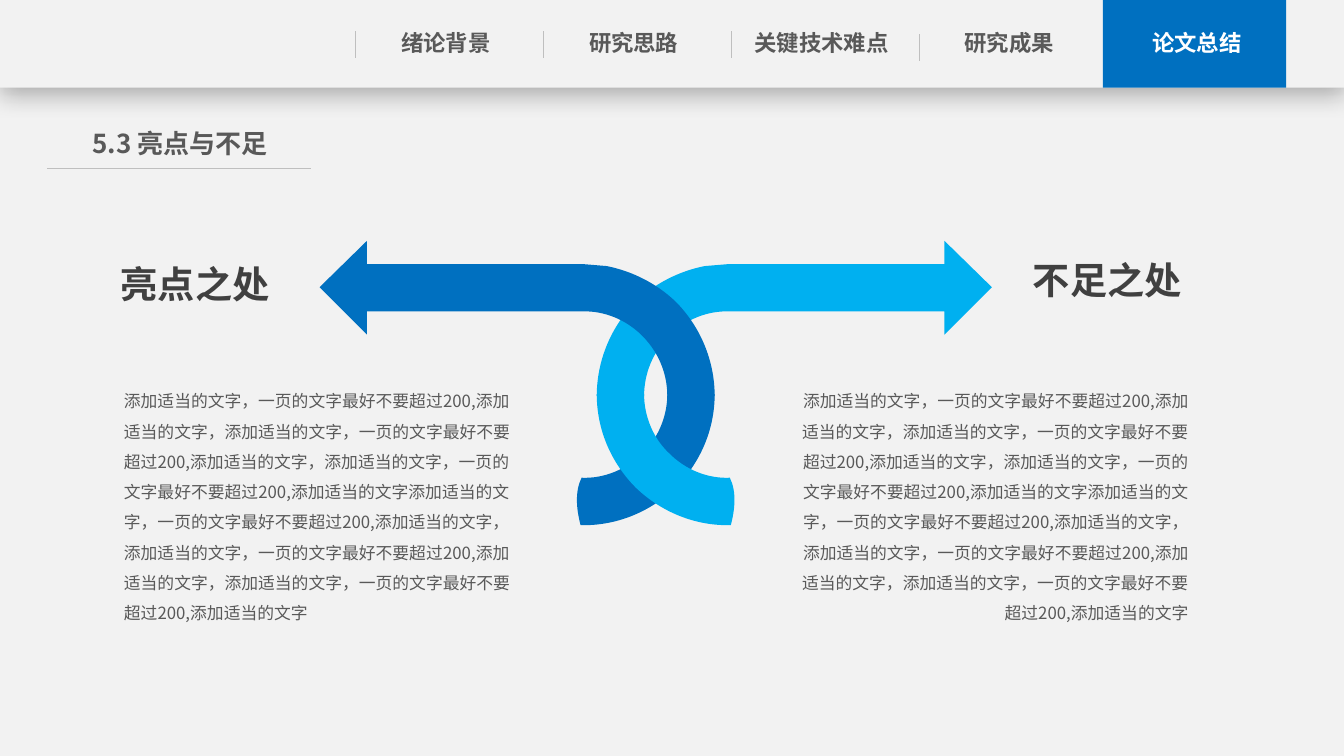
from lxml import etree
from pptx import Presentation
from pptx import util as u
from pptx.dml.color import RGBColor
from pptx.enum import shapes, text
from pptx.oxml import parse_xml
from pptx.oxml.ns import qn

FONT = "Noto Sans CJK SC"
DARK_BLUE, LIGHT_BLUE = "0070C0", "00B0F0"
PAPER, GREY, RULE_GREY = "F2F2F2", "595959", "BFBFBF"
NS = 'xmlns:a="http://schemas.openxmlformats.org/drawingml/2006/main"'
PAGE_WIDTH, PAGE_HEIGHT = 40 / 3, 7.5
TABS = ["绪论背景", "研究思路", "关键技术难点", "研究成果", "论文总结"]
FIRST_TAB, LAST_TAB = 3.69, 11.14
TAB_STEP = (LAST_TAB - FIRST_TAB) / (len(TABS) - 1)
BODY = (
    "添加适当的文字，一页的文字最好不要超过200,添加适当的文字，"
    "添加适当的文字，一页的文字最好不要超过200,添加适当的文字，"
    "添加适当的文字，一页的文字最好不要超过200,添加适当的文字"
    "添加适当的文字，一页的文字最好不要超过200,添加适当的文字，"
    "添加适当的文字，一页的文字最好不要超过200,添加适当的文字，"
    "添加适当的文字，一页的文字最好不要超过200,添加适当的文字"
)
MIRROR_SUM = 13.01  # left and mirrored x add up to this

# Outlines of the right-hand arrow and tail: 2 numbers = line, 6 = curve
ARROW = [
    (9.37, 2.39), (9.84, 2.85), (9.37, 3.32), (9.37, 3.09), (7.24, 3.09),
    (7.02, 3.08, 6.8, 3.17, 6.64, 3.33), (6.48, 3.49, 6.39, 3.7, 6.39, 3.93),
    (5.92, 3.93), (5.92, 3.58, 6.06, 3.24, 6.31, 2.99),
    (6.5, 2.81, 6.74, 2.69, 6.99, 2.64), (7.23, 2.62), (9.37, 2.62),
]
TAIL = [
    (5.92, 3.91), (5.92, 4.26, 6.06, 4.59, 6.31, 4.84),
    (6.56, 5.08, 6.9, 5.22, 7.25, 5.21), (7.29, 5.06, 7.31, 4.88, 7.24, 4.74),
    (7.02, 4.75, 6.8, 4.66, 6.64, 4.5), (6.48, 4.35, 6.39, 4.13, 6.39, 3.91),
]


def rgb(value):
    return RGBColor.from_string(value)


def write(box, words, size, color, bold=False, align=text.PP_ALIGN.LEFT,
          spacing=None, insets=(0.1, 0.05), wrap=True):
    frame = box.text_frame
    frame.word_wrap = wrap
    frame.auto_size = text.MSO_AUTO_SIZE.SHAPE_TO_FIT_TEXT
    frame.vertical_anchor = text.MSO_ANCHOR.TOP
    frame.margin_left = frame.margin_right = u.Inches(insets[0])
    frame.margin_top = frame.margin_bottom = u.Inches(insets[1])
    frame.text = words
    paragraph = frame.paragraphs[0]
    paragraph.alignment = align
    if spacing:
        paragraph.line_spacing = spacing
    font = paragraph.font
    font.size, font.bold, font.name = u.Pt(size), bold, FONT
    font.color.rgb = rgb(color)
    east_asian = etree.SubElement(font._element, qn("a:ea"))
    east_asian.set("typeface", FONT)


def add_text(slide, left, top, width, height, *args, **kwargs):
    box = slide.shapes.add_textbox(*map(u.Inches, (left, top, width, height)))
    write(box, *args, **kwargs)


def paint(shape, color):
    shape.shadow.inherit = False
    shape.fill.solid()
    shape.fill.fore_color.rgb = rgb(color)
    shape.line.fill.background()


def add_block(slide, left, width, height, color):
    block = slide.shapes.add_shape(
        shapes.MSO_SHAPE.RECTANGLE, u.Inches(left), 0, u.Inches(width), u.Inches(height))
    paint(block, color)
    return block


def drop_shadow(shape):
    effects = shape._element.spPr.find(qn("a:effectLst"))
    effects.append(parse_xml(
        f'<a:outerShdw {NS} blurRad="{u.Pt(18)}" dist="{u.Pt(4)}" dir="5400000" '
        'algn="t" rotWithShape="0"><a:srgbClr val="000000">'
        '<a:alpha val="29000"/></a:srgbClr></a:outerShdw>'))


def add_rule(slide, x1, y1, x2, y2):
    rule = slide.shapes.add_connector(
        shapes.MSO_CONNECTOR.STRAIGHT, *map(u.Inches, (x1, y1, x2, y2)))
    rule.line.color.rgb = rgb(RULE_GREY)
    rule.line.width = u.Pt(0.5)
    etree.SubElement(rule._element.spPr, qn("a:effectLst"))


def add_outline(slide, outline, color, mirrored=False):
    points = [(u.Inches(MIRROR_SUM - x if mirrored else x), u.Inches(y))
              for segment in outline
              for x, y in zip(segment[::2], segment[1::2])]
    builder = slide.shapes.build_freeform(*points[0])
    builder.add_line_segments(points[1:], close=True)
    outline_shape = builder.convert_to_shape()
    # Merge the three points of each curve into one Bezier segment
    lines = iter(list(outline_shape._element.iter(qn("a:lnTo"))))
    for segment in outline[1:]:
        line = next(lines)
        if len(segment) == 6:
            line.tag, curve = line.tag, etree.Element(qn("a:cubicBezTo"))
            line.addprevious(curve)
            for control in (line, next(lines), next(lines)):
                curve.append(control[0])
                control.getparent().remove(control)
    paint(outline_shape, color)


def add_page_color(slide):
    page = add_block(slide, 0, PAGE_WIDTH, PAGE_HEIGHT, PAPER)
    slide.shapes._spTree.insert(2, page._element)  # behind the title


def add_navigation(slide):
    drop_shadow(add_block(slide, 0, PAGE_WIDTH, 0.87, PAPER))
    add_block(slide, 10.94, 1.82, 0.87, DARK_BLUE)
    last = len(TABS) - 1
    for i, tab in enumerate(TABS):
        add_text(slide, FIRST_TAB + i * TAB_STEP, 0.24, 1.47, 0.38, tab, 16,
                 "FFFFFF" if i == last else GREY, bold=True,
                 align=text.PP_ALIGN.CENTER, insets=(0, 0.05))
        if i < last:
            x = 3.53 + i * TAB_STEP
            top = 0.34 if i == last - 1 else 0.31
            add_rule(slide, x, top, x, top + 0.27)


def add_heading(slide):
    title = slide.shapes.title
    title.left, title.top, title.width, title.height = map(
        u.Inches, (0.75, 1.21, 2.07, 0.42))
    write(title, "5.3 亮点与不足", 18.6, GREY, bold=True,
          align=text.PP_ALIGN.CENTER, insets=(0, 0.05))
    add_rule(slide, 0.47, 1.67, 3.09, 1.67)


def main():
    prs = Presentation()
    prs.slide_width, prs.slide_height = u.Inches(PAGE_WIDTH), u.Inches(PAGE_HEIGHT)
    slide = prs.slides.add_slide(prs.slide_layouts[5])

    add_page_color(slide)
    add_navigation(slide)
    add_heading(slide)

    # Interlocking arrows, back to front
    add_outline(slide, ARROW, LIGHT_BLUE)
    add_outline(slide, ARROW, DARK_BLUE, mirrored=True)
    add_outline(slide, TAIL, DARK_BLUE, mirrored=True)
    add_outline(slide, TAIL, LIGHT_BLUE)

    # Strengths on the left, shortcomings on the right
    sides = [
        ("亮点之处", 1.1, 2.54, 1.1, 4.14, text.PP_ALIGN.LEFT),
        ("不足之处", 10.15, 2.5, 7.74, 4.18, text.PP_ALIGN.RIGHT),
    ]
    for label, label_left, label_top, left, width, align in sides:
        add_text(slide, label_left, label_top, 1.7, 0.55, label, 26.6, "404040",
                 bold=True, wrap=False)
        add_text(slide, left, 3.72, width, 2.55, BODY, 12, GREY, align=align,
                 spacing=1.5, insets=(0.13, 0.06))

    prs.save("out.pptx")


if __name__ == "__main__":
    main()
